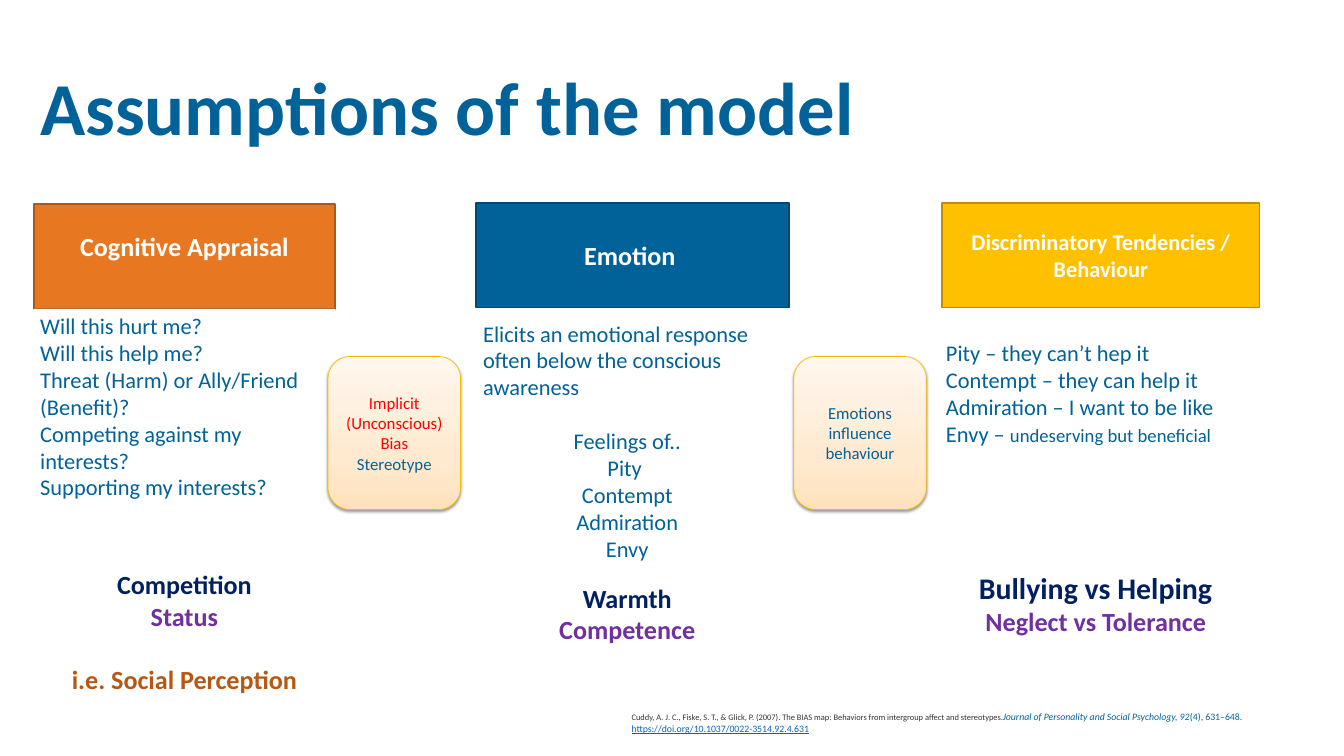
import copy

import pptx
import pptx.dml.color
import pptx.enum.shapes
import pptx.enum.text
import pptx.oxml
import pptx.oxml.ns
import pptx.util

Pt = pptx.util.Pt
RGBColor = pptx.dml.color.RGBColor
SHAPES = pptx.enum.shapes.MSO_SHAPE
ALIGN = pptx.enum.text.PP_ALIGN
ANCHOR = pptx.enum.text.MSO_ANCHOR

WHITE = RGBColor(0xFF, 0xFF, 0xFF)
BLUE = RGBColor(0x00, 0x62, 0x98)
DARK_BLUE = RGBColor(0x00, 0x49, 0x70)
NAVY = RGBColor(0x00, 0x20, 0x60)
PURPLE = RGBColor(0x70, 0x30, 0xA0)
ORANGE = RGBColor(0xE8, 0x77, 0x22)
DARK_ORANGE = RGBColor(0xAC, 0x58, 0x19)
BROWN = RGBColor(0xB5, 0x58, 0x13)
YELLOW = RGBColor(0xFF, 0xC0, 0x00)
DARK_YELLOW = RGBColor(0xBD, 0x8E, 0x00)
GOLD = RGBColor(0xF9, 0xBC, 0x00)
RED = RGBColor(0xFF, 0x00, 0x00)
GREY = RGBColor(0x33, 0x33, 0x33)
LINK_BLUE = RGBColor(0x05, 0x63, 0xC1)
PEACH_STOPS = (
    (0, RGBColor(0xFF, 0xE2, 0xBD)),
    (0.35, RGBColor(0xFF, 0xEA, 0xD1)),
    (1, RGBColor(0xFF, 0xF7, 0xEE)),
)
SHADOW_XML = (
    '<a:outerShdw %s blurRad="39370" dist="20320" dir="5400000" rotWithShape="0">'
    '<a:srgbClr val="000000"><a:alpha val="38000"/></a:srgbClr></a:outerShdw>'
    % pptx.oxml.ns.nsdecls("a")
)


def style_font(font, size, color, bold=False):
    """Set the typeface, size, colour and weight of a font."""
    font.name = "Calibri"
    font.size = Pt(size)
    font.color.rgb = color
    font.bold = bold


def add_line(frame, text, size=24, color=BLUE, bold=False, align=ALIGN.CENTER, gap=0):
    """Write one paragraph, reusing the empty first one of the frame."""
    para = frame.paragraphs[0]
    if para.runs:
        para = frame.add_paragraph()
    para.alignment = align
    if gap:
        para.space_before = Pt(gap)
    style_font(para.font, size, color, bold)
    para.add_run().text = text
    return para


def add_block(page, kind, place, line_color=None, line_width=2, anchor=ANCHOR.MIDDLE):
    """Add a shape without theme shadow and return it."""
    block = page.shapes.add_shape(kind, *map(Pt, place))
    block.shadow.inherit = False
    if line_color is None:
        block.line.fill.background()
    else:
        block.line.color.rgb = line_color
        block.line.width = Pt(line_width)
    block.text_frame.word_wrap = True
    block.text_frame.vertical_anchor = anchor
    return block


def add_header(page, place, text, size, fill, line_color):
    """Add a coloured column heading and return its text frame."""
    header = add_block(page, SHAPES.RECTANGLE, place, line_color)
    header.fill.solid()
    header.fill.fore_color.rgb = fill
    add_line(header.text_frame, text, size, WHITE, True)
    return header.text_frame


def add_panel(page, place, questions, details, outcomes):
    """Add a white column panel with left, centred and bold closing lines."""
    panel = add_block(page, SHAPES.RECTANGLE, place, anchor=ANCHOR.TOP)
    panel.fill.solid()
    panel.fill.fore_color.rgb = WHITE
    frame = panel.text_frame
    for text in questions:
        add_line(frame, text, align=ALIGN.LEFT)
    for text, gap in details:
        add_line(frame, text, gap=gap)
    for text, size, color, gap in outcomes:
        add_line(frame, text, size, color, True, gap=gap)
    return frame


def add_link_card(page, left, lines):
    """Add a shaded rounded card that links two columns."""
    card = add_block(page, SHAPES.ROUNDED_RECTANGLE, (left, 382, 142, 164), GOLD, 0.75)
    card.fill.gradient()
    card.fill.gradient_angle = 90
    stop_list = next(card.element.spPr.iter(pptx.oxml.ns.qn("a:gsLst")))
    stop_list.append(copy.deepcopy(stop_list[-1]))
    for stop, (position, color) in zip(card.fill.gradient_stops, PEACH_STOPS):
        stop.position = position
        stop.color.rgb = color
    effects = card.element.spPr.find(pptx.oxml.ns.qn("a:effectLst"))
    effects.append(pptx.oxml.parse_xml(SHADOW_XML))
    for text, color in lines:
        add_line(card.text_frame, text, 18, color)


def add_title(page, text):
    """Place and format the title placeholder."""
    title = page.shapes.title
    title.left, title.top, title.width, title.height = map(Pt, (36, 68, 1122, 90))
    frame = title.text_frame
    frame.auto_size = pptx.enum.text.MSO_AUTO_SIZE.NONE
    frame.vertical_anchor = ANCHOR.MIDDLE
    add_line(frame, text, 80, BLUE, True, ALIGN.LEFT)


def add_citation(page):
    """Add the reference at the foot of the slide."""
    box = page.shapes.add_textbox(*map(Pt, (669.6, 758, 725.8, 52)))
    box.text_frame.word_wrap = True
    para = box.text_frame.paragraphs[0]
    spans = (
        ("Cuddy, A. J. C., Fiske, S. T., & Glick, P. (2007). The BIAS map: "
         "Behaviors from intergroup affect and stereotypes.", 9, GREY, False),
        ("Journal of Personality and Social Psychology, 92", 10.5, BLUE, True),
        ("(4), 631–648.", 10.5, BLUE, False),
    )
    for text, size, color, italic in spans:
        span = para.add_run()
        span.text = text
        style_font(span.font, size, color)
        span.font.italic = italic
    para.add_line_break()
    link = para.add_run()
    link.text = "https://doi.org/10.1037/0022-3514.92.4.631"
    style_font(link.font, 10.5, LINK_BLUE)
    link.font.underline = True


def main():
    """Build the slide and save it."""
    deck = pptx.Presentation()
    deck.slide_width, deck.slide_height = Pt(1440), Pt(810)
    page = deck.slides.add_slide(deck.slide_layouts[5])
    add_title(page, "Assumptions of the model")

    appraisal = add_header(page, (36, 219, 323, 112), "Cognitive Appraisal", 28,
                           ORANGE, DARK_ORANGE)
    appraisal.margin_bottom = Pt(25.6)
    add_panel(
        page, (36, 331, 323, 441),
        ("Will this hurt me?", "Will this help me?",
         "Threat (Harm) or Ally/Friend (Benefit)?",
         "Competing against my interests?", "Supporting my interests?"),
        (),
        (("Competition", 28, NAVY, 73), ("Status", 28, PURPLE, 0),
         ("i.e. Social Perception", 28, BROWN, 34)),
    )

    add_header(page, (510.5, 217.5, 335, 112), "Emotion ", 28, BLUE, DARK_BLUE)
    add_panel(
        page, (510.5, 339, 323, 380),
        ("Elicits an emotional response often below the conscious awareness",),
        (("Feelings of..", 29), ("Pity ", 0), ("Contempt", 0), ("Admiration", 0),
         ("Envy", 0)),
        (("Warmth", 28, NAVY, 22), ("Competence", 28, PURPLE, 0)),
    )

    add_link_card(page, 351.5, (("Implicit (Unconscious) Bias", RED),
                                ("Stereotype", BLUE)))
    add_link_card(page, 850.5, (("Emotions influence behaviour", BLUE),))

    add_header(page, (1009.5, 217.5, 340, 112), "Discriminatory Tendencies / Behaviour",
               24, YELLOW, DARK_YELLOW)
    tendencies = add_panel(
        page, (1006.5, 330.5, 335, 446),
        ("Pity – they can’t hep it", "Contempt – they can help it",
         "Admiration – I want to be like", "Envy – "),
        (),
        (("Bullying vs Helping", 32, NAVY, 132), ("Neglect vs Tolerance", 28, PURPLE, 0)),
    )
    tendencies.margin_top = Pt(33)
    remark = tendencies.paragraphs[3].add_run()
    remark.text = "undeserving but beneficial"
    remark.font.size = Pt(20)

    add_citation(page)
    deck.save("out.pptx")


if __name__ == "__main__":
    main()
